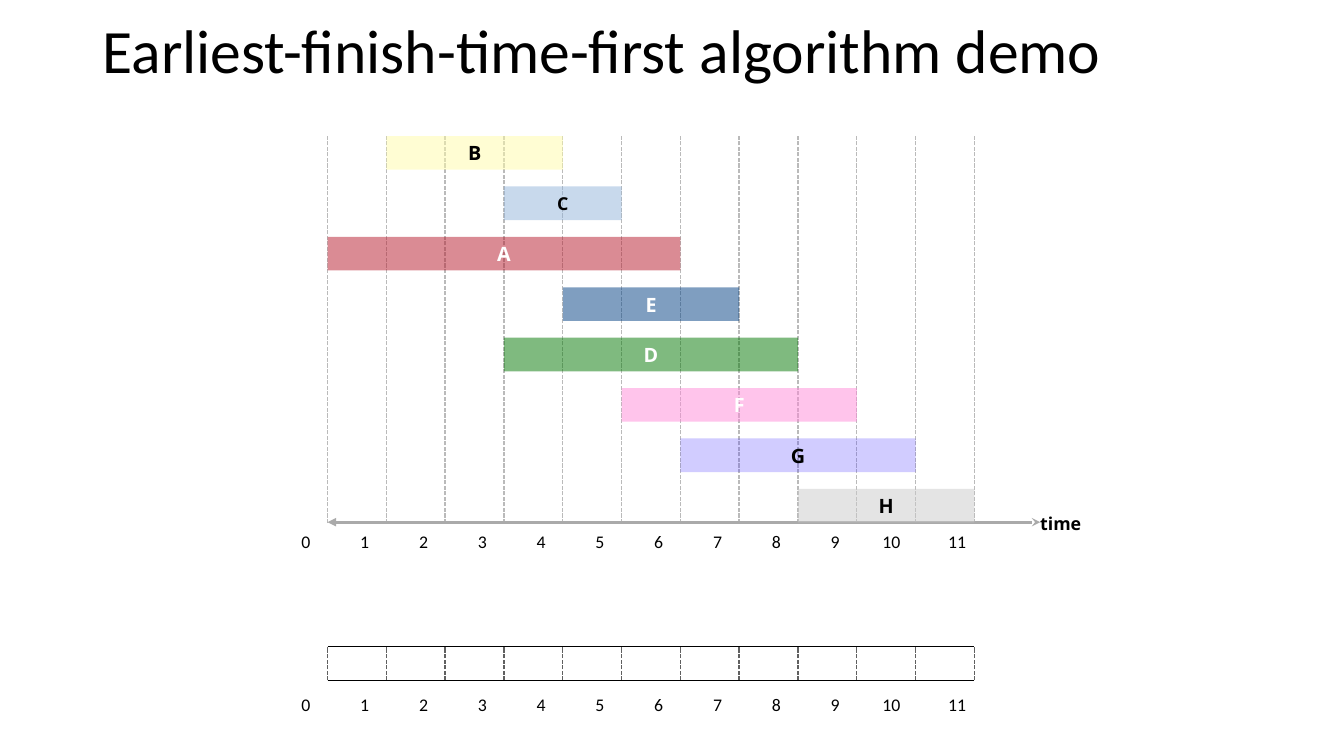
from pptx import Presentation
from pptx.dml.color import RGBColor
from pptx.enum.dml import MSO_LINE
from pptx.enum.shapes import MSO_CONNECTOR, MSO_SHAPE
from pptx.enum.text import MSO_ANCHOR, MSO_AUTO_SIZE, PP_ALIGN
from pptx.oxml.ns import qn
from pptx.util import Pt
from lxml.etree import SubElement

TITLE = "Earliest-finish-time-first algorithm demo"
AXIS_NAME = "time"
# job, start, finish, fill, opacity in percent, label colour; sorted by finish time
JOBS = [
    ("B", 1, 4, "FFFDA9", 50, "000000"),
    ("C", 3, 5, "92B4DB", 50, "000000"),
    ("A", 0, 6, "B6192B", 50, "FFFFFF"),
    ("E", 4, 7, "003F83", 50, "FFFFFF"),
    ("D", 3, 8, "007600", 50, "FFFFFF"),
    ("F", 5, 9, "FF8AD8", 50, "FFFFFF"),
    ("G", 6, 10, "4834FF", 25, "000000"),
    ("H", 8, 11, "CBCBCB", 50, "000000"),
]
LAST_TIME = 11

THEME = {
    "heading_font": "Calibri", "label_font": "Open Sans",
    "title_size": 44, "tick_size": 12.7, "job_size": 14.1,
    "text": "000000", "grid": "BABABA", "slot": "606060",
    "axis": "AAAAAA", "schedule": "000000",
}

ORIGIN, HOUR = 234, 42
JOBS_TOP, JOB_PITCH, JOB_HEIGHT = 97.2, 36, 24
AXIS_Y, AXIS_END = 373, 743
GRID_BOTTOM = 373.7
SCHEDULE_TOP, SCHEDULE_BOTTOM = 462, 486
TICK_ROWS = (379.3, 495.4)
TICK_SHIFT, TICK_WIDTH, TICK_HEIGHT = -18.7, 37.4, 15.1
TICK_NUDGE = {10: -5}


def time_x(time):
    return ORIGIN + time * HOUR


def write(shape, text, *, font, size, color=THEME["text"], bold=False,
          align=PP_ALIGN.LEFT, anchor=MSO_ANCHOR.TOP, inset=0, spacing=None):
    frame = shape.text_frame
    frame.auto_size = MSO_AUTO_SIZE.NONE
    frame.word_wrap = True
    frame.vertical_anchor = anchor
    frame.margin_left = frame.margin_right = Pt(inset)
    frame.margin_top = frame.margin_bottom = Pt(inset / 2)
    paragraph = frame.paragraphs[0]
    paragraph.alignment = align
    paragraph.line_spacing = spacing
    run = paragraph.add_run()
    run.text = text
    run.font.name, run.font.size, run.font.bold = font, Pt(size), bold
    run.font.color.rgb = RGBColor.from_string(color)


def add_label(slide, text, left, top, width, **style):
    label = slide.shapes.add_textbox(Pt(left), Pt(top), Pt(width), Pt(TICK_HEIGHT))
    write(label, text, size=THEME["tick_size"], **style)


def add_line(slide, x1, y1, x2, y2, color, width=1, dash=None, ends=()):
    """Draw a straight line; ends holds (tag, arrowhead type) pairs."""
    connector = slide.shapes.add_connector(
        MSO_CONNECTOR.STRAIGHT, Pt(x1), Pt(y1), Pt(x2), Pt(y2))
    line = connector.line
    line.color.rgb = RGBColor.from_string(color)
    line.width = Pt(width)
    if dash:
        line.dash_style = dash
    properties = connector._element.spPr
    for tag, kind in ends:
        SubElement(properties.find(qn("a:ln")), qn(tag), type=kind, w="med", len="med")
    SubElement(properties, qn("a:effectLst"))


def add_time_lines(slide, bottom, top, color):
    for time in range(LAST_TIME + 1):
        add_line(slide, time_x(time), bottom, time_x(time), top, color,
                 dash=MSO_LINE.SQUARE_DOT)


def add_ticks(slide, top):
    for time in range(LAST_TIME + 1):
        left = time_x(time) + TICK_SHIFT + TICK_NUDGE.get(time, 0)
        add_label(slide, str(time), left, top, TICK_WIDTH, font=THEME["heading_font"])


def add_job(slide, row, job, start, finish, fill, opacity, color):
    bar = slide.shapes.add_shape(
        MSO_SHAPE.RECTANGLE, Pt(time_x(start)), Pt(JOBS_TOP + row * JOB_PITCH),
        Pt((finish - start) * HOUR), Pt(JOB_HEIGHT))
    bar.shadow.inherit = False
    bar.line.fill.background()
    bar.fill.solid()
    bar.fill.fore_color.rgb = RGBColor.from_string(fill)
    fill_color = bar._element.spPr.find(qn("a:solidFill"))[0]
    SubElement(fill_color, qn("a:alpha"), val=str(opacity * 1000))
    size = THEME["tick_size"] if job == "C" else THEME["job_size"]
    write(bar, job, font=THEME["label_font"], size=size, color=color, bold=True,
          align=PP_ALIGN.CENTER, anchor=MSO_ANCHOR.MIDDLE)


def main():
    deck = Presentation()
    deck.slide_width, deck.slide_height = Pt(960), Pt(540)
    slide = deck.slides.add_slide(deck.slide_layouts[5])

    title = slide.shapes.title
    title.left, title.top, title.width, title.height = Pt(66), Pt(10.8), Pt(828), Pt(55.4)
    write(title, TITLE, font=THEME["heading_font"], size=THEME["title_size"],
          anchor=MSO_ANCHOR.MIDDLE, inset=7.2, spacing=0.9)

    add_time_lines(slide, GRID_BOTTOM, JOBS_TOP, THEME["grid"])
    add_time_lines(slide, SCHEDULE_BOTTOM, SCHEDULE_TOP, THEME["slot"])
    for y in (SCHEDULE_TOP, SCHEDULE_BOTTOM):
        add_line(slide, ORIGIN, y, time_x(LAST_TIME), y, THEME["schedule"])
    add_line(slide, ORIGIN, AXIS_Y, AXIS_END, AXIS_Y, THEME["axis"], width=2,
             ends=(("a:headEnd", "triangle"), ("a:tailEnd", "stealth")))
    add_label(slide, AXIS_NAME, AXIS_END, 366.5, 67, font=THEME["label_font"], bold=True)
    for top in TICK_ROWS:
        add_ticks(slide, top)
    for row, job in enumerate(JOBS):
        add_job(slide, row, *job)

    deck.save("out.pptx")


if __name__ == "__main__":
    main()
